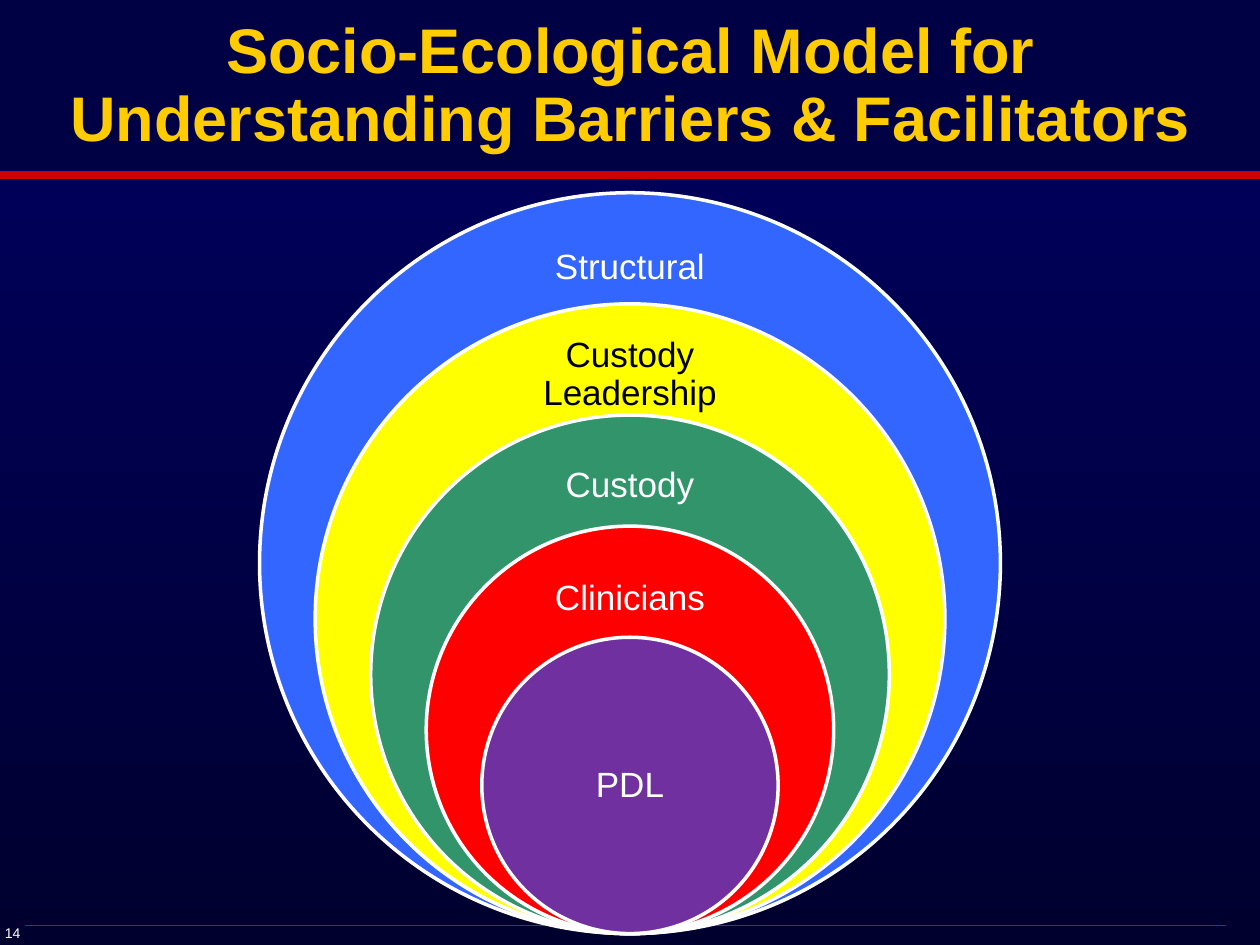
from pptx import Presentation
from pptx import util as u
from pptx.dml.color import RGBColor
from pptx.enum import shapes, text
from pptx.oxml.ns import qn
from lxml import etree

WHITE = RGBColor(0xFF, 0xFF, 0xFF)
BLACK = RGBColor(0x00, 0x00, 0x00)
GOLD = RGBColor(0xFF, 0xCC, 0x00)
RULE_RED = RGBColor(0xCC, 0x00, 0x00)
HEADER_NAVY = RGBColor(0x00, 0x00, 0x44)
BG_TOP = RGBColor(0x00, 0x00, 0x64)
BG_BOTTOM = RGBColor(0x00, 0x00, 0x2F)
BLUE = RGBColor(0x33, 0x66, 0xFF)
YELLOW = RGBColor(0xFF, 0xFF, 0x00)
GREEN = RGBColor(0x32, 0x94, 0x6A)
RED = RGBColor(0xFF, 0x00, 0x00)
PURPLE = RGBColor(0x70, 0x30, 0xA0)

# Content
TITLE = "Socio-Ecological Model for Understanding Barriers & Facilitators"
PAGE = "14"
# level, fill, text colour, label width, label height, label offset from circle top
LEVELS = [
    ("Structural", BLUE, WHITE, 2.2, 0.59, 0.3),
    ("Custody Leadership", YELLOW, BLACK, 2.15, 0.57, 0.28),
    ("Custody", GREEN, WHITE, 2.13, 0.57, 0.28),
    ("Clinicians", RED, WHITE, 1.75, 0.58, 0.29),
    ("PDL", PURPLE, WHITE, 1.66, 1.18, 0.59),
]
# x1, x2, y, width in points
RULES = [(10.28, -0.16, 1.39, 4.5), (9.72, 0.2, 7.34, 0.25)]

# Circles share a centre line and a lowest point
CENTRE_X, BOTTOM, OUTER = 5, 7.41, 5.88
SHRINK = 0.15 * OUTER


def box(*lengths):
    return [u.Inches(v) for v in lengths]


def add_solid(s, kind, at, fill):
    sp = s.shapes.add_shape(kind, *box(*at))
    sp.shadow.inherit = False
    sp.fill.solid()
    sp.fill.fore_color.rgb = fill
    return sp


def write(sp, words, size, color, inset=(0.1, 0.05), bold=False, **para):
    tf = sp.text_frame
    tf.word_wrap = True
    tf.auto_size = text.MSO_AUTO_SIZE.NONE
    tf.vertical_anchor = text.MSO_ANCHOR.MIDDLE
    tf.margin_left = tf.margin_right = u.Inches(inset[0])
    tf.margin_top = tf.margin_bottom = u.Inches(inset[1])
    p = tf.paragraphs[0]
    for name, value in para.items():
        setattr(p, name, value)
    r = p.add_run()
    r.text = words
    font = {"name": "Arial", "size": u.Pt(size), "bold": bold}
    for name, value in font.items():
        setattr(r.font, name, value)
    r.font.color.rgb = color


prs = Presentation()
prs.slide_width, prs.slide_height = box(10, 7.5)
s = prs.slides.add_slide(prs.slide_layouts[5])

# Background gradient, running downwards
bg = s.background.fill
bg.gradient()
bg.gradient_angle = 270
for stop, color in zip(bg.gradient_stops, (BG_TOP, BG_BOTTOM)):
    stop.color.rgb = color

# Header band and rules
band = add_solid(s, shapes.MSO_SHAPE.RECTANGLE, (-0.04, -0.03, 10.12, 1.38), HEADER_NAVY)
band.line.fill.background()
for x1, x2, y, weight in RULES:
    rule = s.shapes.add_connector(shapes.MSO_CONNECTOR.STRAIGHT, *box(x1, y, x2, y))
    rule.line.color.rgb = RULE_RED
    rule.line.width = u.Pt(weight)
    etree.SubElement(rule._element.spPr, qn("a:effectLst"))

# Page number
write(s.shapes.add_textbox(*box(-0.06, 7.29, 0.42, 0.23)), PAGE, 8, WHITE)

# Title, brought in front of the band
title = s.shapes.title
title.left, title.top, title.width, title.height = box(0.2, 0.08, 9.61, 1.23)
write(title, TITLE, 36, GOLD, bold=True, alignment=text.PP_ALIGN.CENTER, line_spacing=0.9)
s.shapes._spTree.append(title._element)

# Nested circles with their labels
for i, (level, fill, color, width, height, offset) in enumerate(LEVELS):
    size = OUTER - i * SHRINK
    top = BOTTOM - size
    circle = add_solid(s, shapes.MSO_SHAPE.OVAL, (CENTRE_X - size / 2, top, size, size), fill)
    circle.line.color.rgb = WHITE
    circle.line.width = u.Pt(2)
    label = s.shapes.add_textbox(*box(CENTRE_X - width / 2, top + offset, width, height))
    write(label, level, 20, color, inset=(0.16, 0.16),
          alignment=text.PP_ALIGN.CENTER, line_spacing=0.9)

prs.save("out.pptx")
